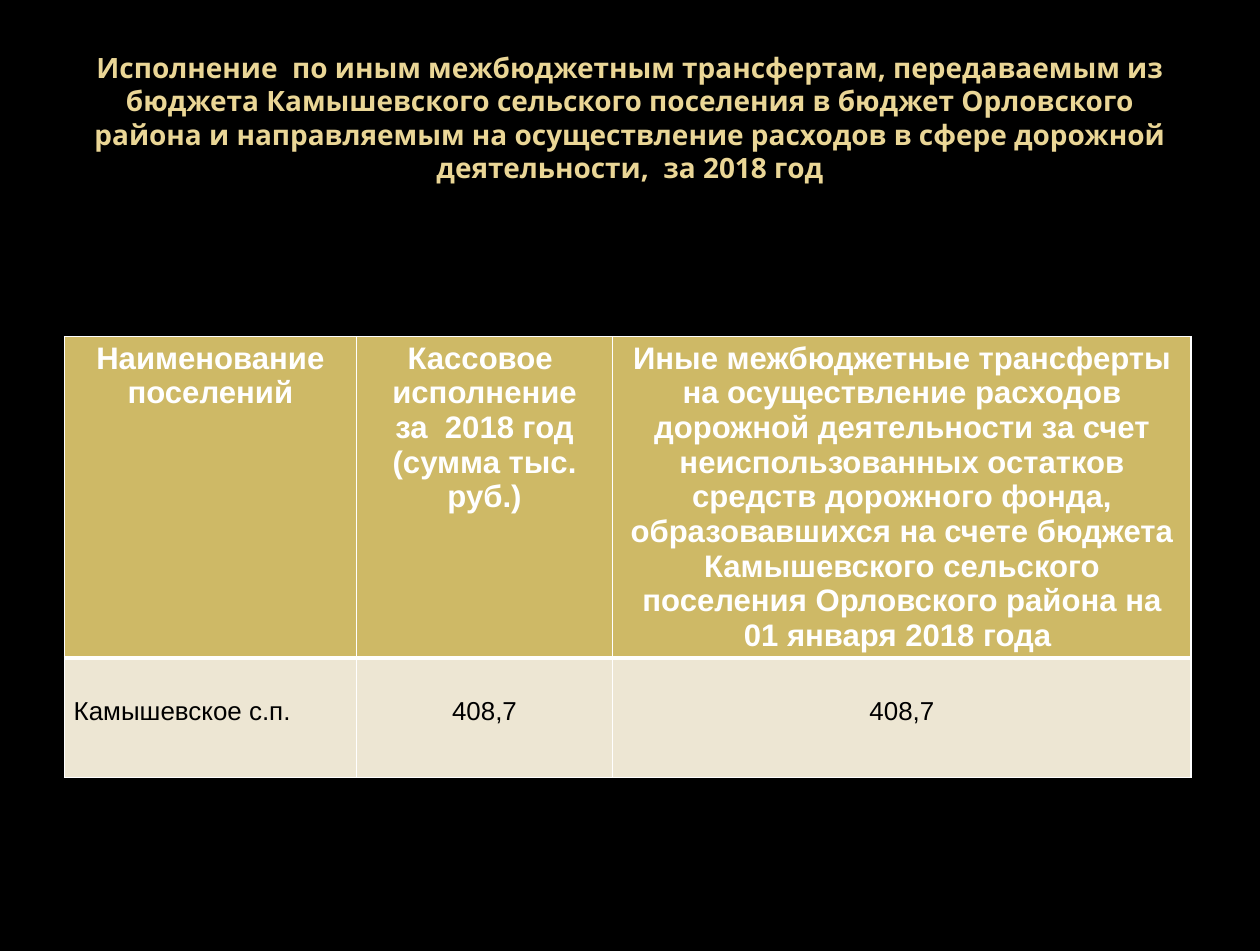
from lxml import etree
from pptx import Presentation
from pptx.dml.color import RGBColor
from pptx.enum.text import MSO_ANCHOR, MSO_AUTO_SIZE, PP_ALIGN
from pptx.oxml.ns import qn
from pptx.util import Pt

LEFT, CENTER = PP_ALIGN.LEFT, PP_ALIGN.CENTER
MIDDLE = MSO_ANCHOR.MIDDLE
NO_AUTOFIT = MSO_AUTO_SIZE.NONE

EMU_PER_PX = 9144
SLIDE_SIZE = (1351, 1020)
BACKGROUND = "000000"
BORDER = "FFFFFF"
THIN, THICK = 1, 3

TITLE = (
    "Исполнение  по иным межбюджетным трансфертам, передаваемым из бюджета "
    "Камышевского сельского поселения в бюджет Орловского района и направляемым "
    "на осуществление расходов в сфере дорожной деятельности,  за 2018 год"
)
TITLE_BOX = (68, 41, 1215, 170)
TITLE_MARGINS = {"margin_left": 14, "margin_right": 14, "margin_top": 7, "margin_bottom": 7}
TITLE_FONT = {"name": "Open Sans", "size": Pt(21.6), "bold": True}
TITLE_COLOR = "EAD696"
TITLE_LINE_SPACING = 1.0

TABLE_ORIGIN = (69, 361)
COLUMN_WIDTHS = [313, 275, 620]
ROWS = [
    {
        "cells": [
            ["Наименование", "поселений"],
            ["Кассовое ", "исполнение", "за  2018 год", "(сумма тыс. руб.)"],
            [
                "Иные межбюджетные трансферты на осуществление расходов дорожной "
                "деятельности за счет неиспользованных остатков средств дорожного "
                "фонда, образовавшихся на счете бюджета Камышевского сельского "
                "поселения Орловского района на 01 января 2018 года "
            ],
        ],
        "height": 344,
        "alignments": [CENTER, CENTER, CENTER],
        "font": {"name": "Arial", "size": Pt(24), "bold": True},
        "color": "FFFFFF",
        "fill": "CEB966",
        "margin_top": 5,
        "borders": {"lnL": THIN, "lnR": THIN, "lnT": THIN, "lnB": THICK},
    },
    {
        "cells": [["Камышевское с.п."], ["408,7"], ["408,7"]],
        "height": 128,
        "alignments": [LEFT, CENTER, CENTER],
        "font": {"name": "Arial", "size": Pt(20), "bold": False},
        "color": "000000",
        "fill": "EDE6D3",
        "margin_top": 42,
        "borders": {"lnL": THIN, "lnR": THIN, "lnT": THICK, "lnB": THIN},
    },
]


def px(length):
    return length * EMU_PER_PX


def rgb(value):
    return RGBColor.from_string(value)


def set_values(target, values):
    for name, value in values.items():
        setattr(target, name, value)


def paint(fill, color):
    fill.solid()
    fill.fore_color.rgb = rgb(color)


def write_paragraph(paragraph, text, alignment, font, color):
    paragraph.alignment = alignment
    run = paragraph.add_run()
    run.text = text
    set_values(run.font, font)
    run.font.color.rgb = rgb(color)


def add_borders(cell, borders):
    properties = cell._tc.get_or_add_tcPr()
    for tag, width in borders.items():
        line = etree.SubElement(properties, qn(f"a:{tag}"), w=str(Pt(width)))
        solid = etree.SubElement(line, qn("a:solidFill"))
        etree.SubElement(solid, qn("a:srgbClr"), val=BORDER)


def add_title(slide):
    title = slide.shapes.title
    set_values(title, dict(zip(("left", "top", "width", "height"), map(px, TITLE_BOX))))
    frame = title.text_frame
    set_values(frame, {"word_wrap": True, "auto_size": NO_AUTOFIT, "vertical_anchor": MIDDLE})
    set_values(frame, {name: px(value) for name, value in TITLE_MARGINS.items()})
    paragraph = frame.paragraphs[0]
    write_paragraph(paragraph, TITLE, CENTER, TITLE_FONT, TITLE_COLOR)
    paragraph.line_spacing = TITLE_LINE_SPACING


def fill_cell(cell, lines, alignment, row):
    add_borders(cell, row["borders"])
    paint(cell.fill, row["fill"])
    cell.margin_top = px(row["margin_top"])
    frame = cell.text_frame
    for index, text in enumerate(lines):
        paragraph = frame.add_paragraph() if index else frame.paragraphs[0]
        write_paragraph(paragraph, text, alignment, row["font"], row["color"])


def add_transfers_table(slide):
    width = sum(COLUMN_WIDTHS)
    height = sum(row["height"] for row in ROWS)
    box = map(px, (*TABLE_ORIGIN, width, height))
    table = slide.shapes.add_table(len(ROWS), len(COLUMN_WIDTHS), *box).table
    for column, column_width in zip(table.columns, COLUMN_WIDTHS):
        column.width = px(column_width)
    for table_row, row in zip(table.rows, ROWS):
        table_row.height = px(row["height"])
        for cell, lines, alignment in zip(table_row.cells, row["cells"], row["alignments"]):
            fill_cell(cell, lines, alignment, row)


def main():
    presentation = Presentation()
    presentation.slide_width, presentation.slide_height = map(px, SLIDE_SIZE)
    slide = presentation.slides.add_slide(presentation.slide_layouts[5])
    paint(slide.background.fill, BACKGROUND)
    add_title(slide)
    add_transfers_table(slide)
    presentation.save("out.pptx")


if __name__ == "__main__":
    main()
